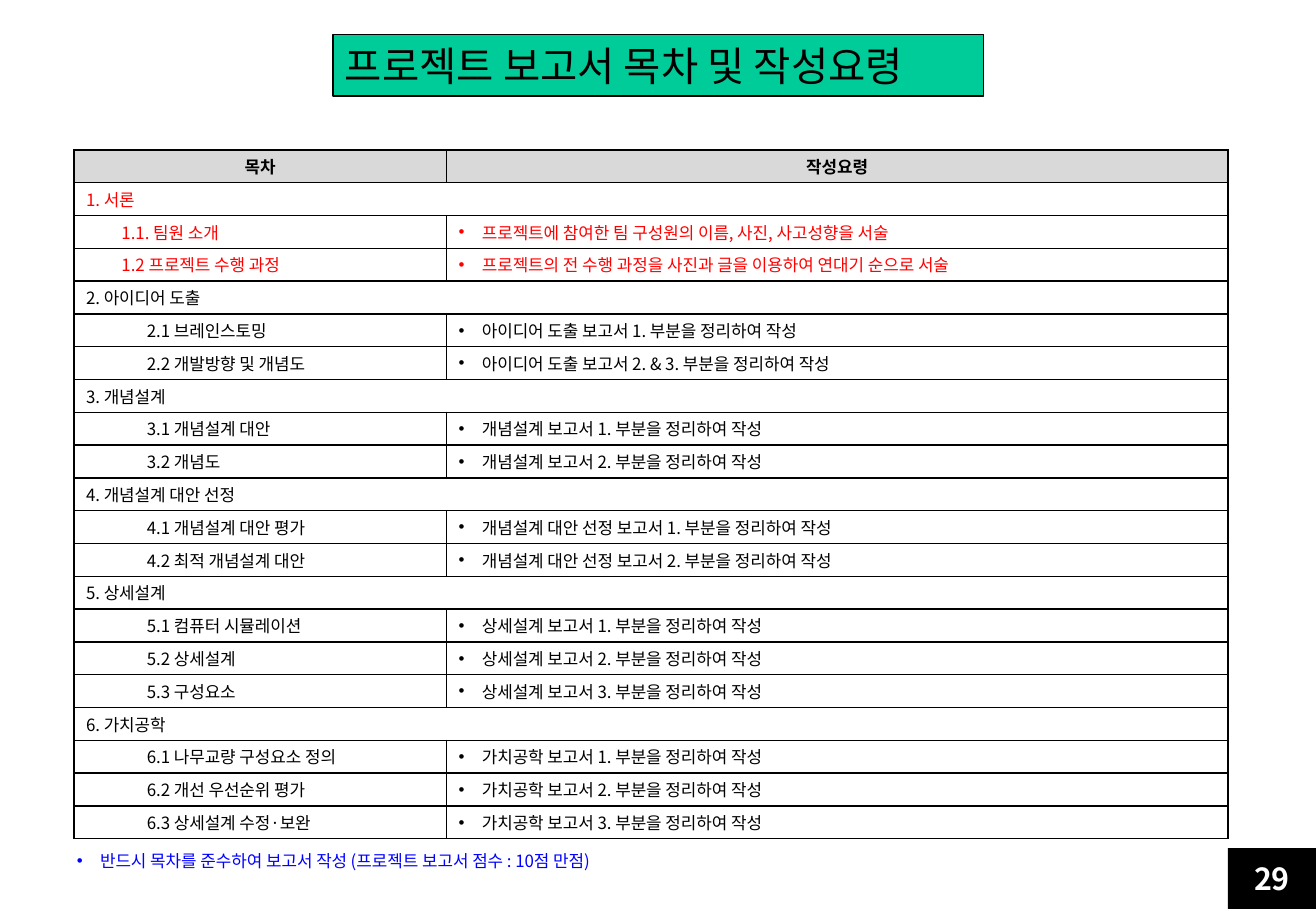
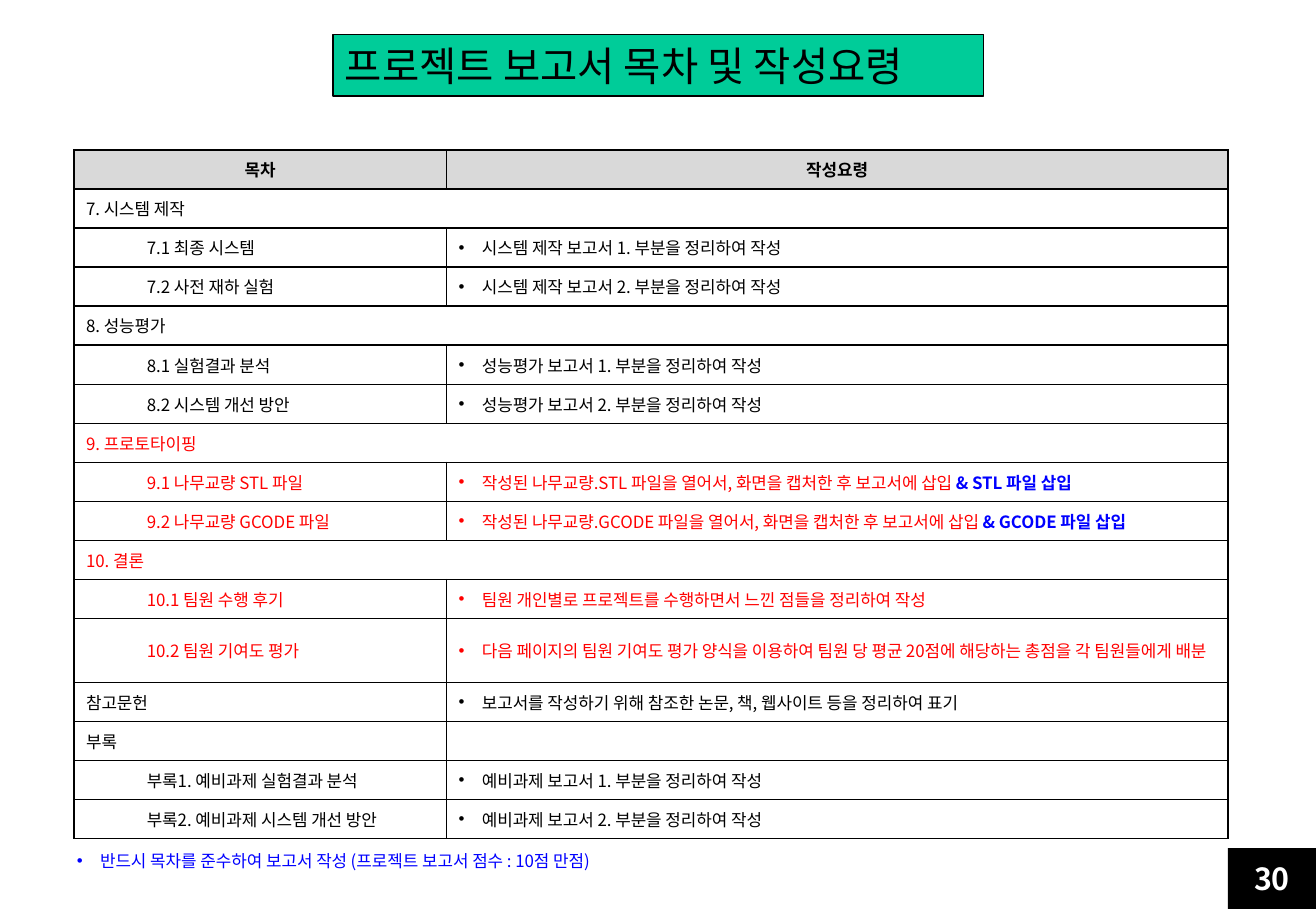
from dataclasses import dataclass

from lxml import etree
from pptx import Presentation
from pptx.dml.color import RGBColor
from pptx.enum.shapes import MSO_SHAPE as Shape
from pptx.enum.text import MSO_ANCHOR as Anchor, PP_ALIGN as Align
from pptx.oxml.ns import qn
from pptx.util import Emu, Pt

# Shared look
PX = 7620  # 120 px to the inch
FONT = "Noto Sans CJK KR"
BLACK, WHITE, RED, BLUE = "000000", "FFFFFF", "FF0000", "0000FF"
GREEN, GREY = "00CC99", "D9D9D9"
BODY = {"size": 10}
HEADER = {"size": 10, "bold": True}

# Shared layout
INSET = 12
BULLET_INDENT = 23
COLUMNS = (368, 772)
TABLE_LEFT, TABLE_TOP, TABLE_HEIGHT = 73, 148, 681
TALL_ROW = 63

TITLE = "프로젝트 보고서 목차 및 작성요령"
HEADINGS = ("목차", "작성요령")
NOTICE = "반드시 목차를 준수하여 보고서 작성 (프로젝트 보고서 점수 : 10점 만점)"


@dataclass
class Section:
    """A heading row and its items; without a guide the heading spans the table."""
    heading: str
    items: tuple = ()
    color: str = BLACK
    indent: int = 60
    guide: str | None = None


def px(value):
    return Emu(round(value * PX))


def rgb(color):
    return RGBColor.from_string(color)


def report_items(report, *labels):
    """Pair each label with the matching part of a report."""
    return tuple((label, f"{report} 보고서 {part}. 부분을 정리하여 작성")
                 for part, label in enumerate(labels, 1))


def file_item(label, kind):
    return (label, f"작성된 나무교량.{kind} 파일을 열어서, 화면을 캡처한 후 보고서에 삽입 ",
            f"& {kind} 파일 삽입")


FIRST_HALF = (
    Section("1. 서론", (
        ("1.1. 팀원 소개", "프로젝트에 참여한 팀 구성원의 이름, 사진, 사고성향을 서술"),
        ("1.2 프로젝트 수행 과정",
         "프로젝트의 전 수행 과정을 사진과 글을 이용하여 연대기 순으로 서술"),
    ), RED, 35),
    Section("2. 아이디어 도출", (
        ("2.1 브레인스토밍", "아이디어 도출 보고서 1. 부분을 정리하여 작성"),
        ("2.2 개발방향 및 개념도", "아이디어 도출 보고서 2. & 3. 부분을 정리하여 작성"),
    )),
    Section("3. 개념설계", report_items("개념설계", "3.1 개념설계 대안", "3.2 개념도")),
    Section("4. 개념설계 대안 선정", report_items(
        "개념설계 대안 선정", "4.1 개념설계 대안 평가", "4.2 최적 개념설계 대안")),
    Section("5. 상세설계", report_items(
        "상세설계", "5.1 컴퓨터 시뮬레이션", "5.2 상세설계", "5.3 구성요소")),
    Section("6. 가치공학", report_items(
        "가치공학", "6.1 나무교량 구성요소 정의", "6.2 개선 우선순위 평가",
        "6.3 상세설계 수정·보완")),
)

SECOND_HALF = (
    Section("7. 시스템 제작", report_items(
        "시스템 제작", "7.1 최종 시스템", "7.2 사전 재하 실험")),
    Section("8. 성능평가", report_items(
        "성능평가", "8.1 실험결과 분석", "8.2 시스템 개선 방안")),
    Section("9. 프로토타이핑", (
        file_item("9.1 나무교량 STL 파일", "STL"),
        file_item("9.2 나무교량 GCODE 파일", "GCODE"),
    ), RED),
    Section("10. 결론", (
        ("10.1 팀원 수행 후기",
         "팀원 개인별로 프로젝트를 수행하면서 느낀 점들을 정리하여 작성"),
        ("10.2 팀원 기여도 평가",
         "다음 페이지의 팀원 기여도 평가 양식을 이용하여 팀원 당 평균 20점에 "
         "해당하는 총점을 각 팀원들에게 배분"),
    ), RED),
    Section("참고문헌",
            guide="보고서를 작성하기 위해 참조한 논문, 책, 웹사이트 등을 정리하여 표기"),
    Section("부록", report_items(
        "예비과제", "부록1. 예비과제 실험결과 분석", "부록2. 예비과제 시스템 개선 방안"),
        guide=""),
)

# Page number, sections, positions of two-line rows
PAGES = ((29, FIRST_HALF, ()), (30, SECOND_HALF, (12,)))


# Text
def add_run(paragraph, text, color=BLACK, size=10, bold=False):
    run = paragraph.add_run()
    run.text = text
    for name, value in {"size": Pt(size), "bold": bold, "name": FONT}.items():
        setattr(run.font, name, value)
    run.font.color.rgb = rgb(color)
    etree.SubElement(run._r.get_or_add_rPr(), qn("a:ea"), typeface=FONT)


def indent_paragraph(paragraph, left, bullet=False):
    properties = paragraph._p.get_or_add_pPr()
    properties.set("marL", str(px(left)))
    properties.set("indent", str(-px(left) if bullet else 0))
    if bullet:
        etree.SubElement(properties, qn("a:buFont"), typeface="Arial")
        etree.SubElement(properties, qn("a:buChar"), char="•")


def set_frame(frame, margin_y):
    margins = {"margin_left": px(INSET), "margin_right": px(INSET),
               "margin_top": px(margin_y), "margin_bottom": px(margin_y)}
    for name, value in {**margins, "word_wrap": True}.items():
        setattr(frame, name, value)


# Shapes
def add_box(slide, box, text, fill, style, align, outline=None):
    shape = slide.shapes.add_shape(Shape.RECTANGLE, *map(px, box))
    shape.shadow.inherit = False
    shape.fill.solid()
    shape.fill.fore_color.rgb = rgb(fill)
    if outline:
        shape.line.color.rgb = rgb(outline)
        shape.line.width = Pt(0.75)
    else:
        shape.line.fill.background()
    frame = shape.text_frame
    set_frame(frame, 0)
    frame.vertical_anchor = Anchor.MIDDLE
    paragraph = frame.paragraphs[0]
    paragraph.alignment = align
    add_run(paragraph, text, **style)


def add_notice(slide):
    frame = slide.shapes.add_textbox(*map(px, (64, 829, 1096, 38))).text_frame
    set_frame(frame, 1)
    paragraph = frame.paragraphs[0]
    paragraph.line_spacing = 1.5
    indent_paragraph(paragraph, BULLET_INDENT, bullet=True)
    add_run(paragraph, NOTICE, BLUE)


# Table
def add_borders(cell):
    properties = cell._tc.get_or_add_tcPr()
    for side in ("lnL", "lnR", "lnT", "lnB"):
        border = etree.SubElement(properties, qn(f"a:{side}"), w=str(Pt(1)))
        paint = etree.SubElement(border, qn("a:solidFill"))
        etree.SubElement(paint, qn("a:srgbClr"), val=BLACK)


def fill_cell(cell, text, fill=WHITE, style=BODY, color=BLACK, align=None,
              indent=0, bullet=False, highlight=""):
    add_borders(cell)
    cell.fill.solid()
    cell.fill.fore_color.rgb = rgb(fill)
    layout = {"margin_left": px(INSET), "margin_right": px(INSET),
              "margin_top": px(2), "margin_bottom": px(2),
              "vertical_anchor": Anchor.MIDDLE}
    for name, value in layout.items():
        setattr(cell, name, value)
    paragraph = cell.text_frame.paragraphs[0]
    if not text:
        etree.SubElement(paragraph._p, qn("a:endParaRPr"), sz="1000")
        return
    paragraph.alignment = align
    indent_paragraph(paragraph, indent, bullet)
    add_run(paragraph, text, color, **style)
    if highlight:
        add_run(paragraph, highlight, BLUE, **HEADER)


def fill_guide(cell, text, color, highlight=""):
    fill_cell(cell, text, color=color, indent=BULLET_INDENT, bullet=True,
              highlight=highlight)


def add_contents_table(slide, sections, tall_rows):
    count = 1 + sum(1 + len(section.items) for section in sections)
    box = (TABLE_LEFT, TABLE_TOP, sum(COLUMNS), TABLE_HEIGHT)
    table = slide.shapes.add_table(count, len(COLUMNS), *map(px, box)).table
    for column, width in zip(table.columns, COLUMNS):
        column.width = px(width)
    row_height = (TABLE_HEIGHT - TALL_ROW * len(tall_rows)) / (count - len(tall_rows))
    for index, row in enumerate(table.rows):
        row.height = px(TALL_ROW if index in tall_rows else row_height)

    rows = iter(table.rows)
    for cell, heading in zip(next(rows).cells, HEADINGS):
        fill_cell(cell, heading, GREY, HEADER, align=Align.CENTER)
    for section in sections:
        label_cell, guide_cell = next(rows).cells
        fill_cell(label_cell, section.heading, color=section.color)
        fill_guide(guide_cell, section.guide, section.color)
        if section.guide is None:
            label_cell.merge(guide_cell)
        for label, guide, *highlight in section.items:
            label_cell, guide_cell = next(rows).cells
            fill_cell(label_cell, label, color=section.color, indent=section.indent)
            fill_guide(guide_cell, guide, section.color, *highlight)


def main():
    deck = Presentation()
    deck.slide_width, deck.slide_height = px(1300), px(900)
    for number, sections, tall_rows in PAGES:
        slide = deck.slides.add_slide(deck.slide_layouts[6])
        add_box(slide, (329, 34, 643, 61), TITLE, GREEN, {"size": 24},
                Align.LEFT, outline=BLACK)
        add_box(slide, (1213, 838, 87, 60), str(number), BLACK,
                {"size": 18, "bold": True, "color": WHITE}, Align.CENTER)
        add_contents_table(slide, sections, tall_rows)
        add_notice(slide)
    deck.save("out.pptx")


if __name__ == "__main__":
    main()
